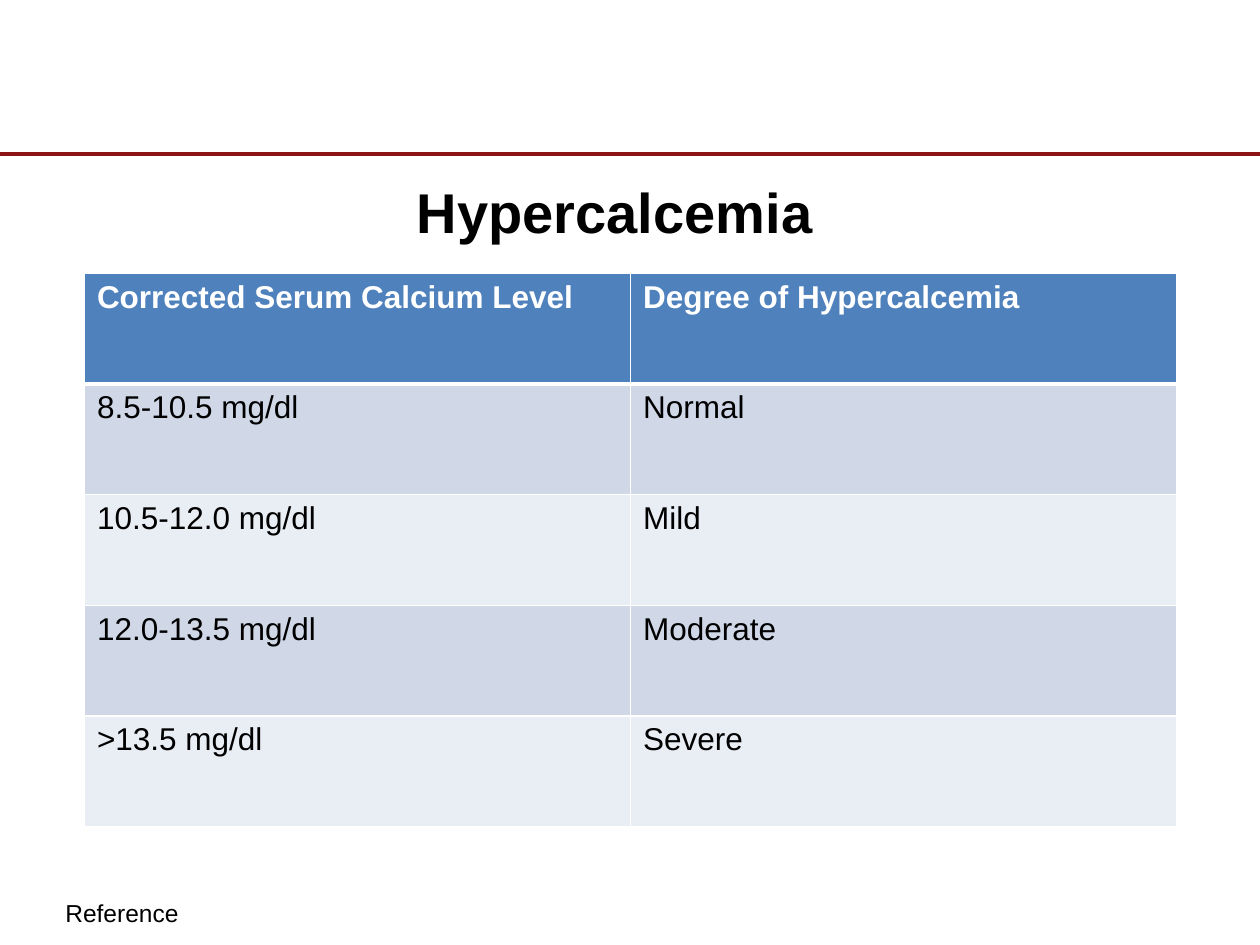
from lxml import etree
from pptx import Presentation
from pptx import util as u
from pptx.dml.color import RGBColor
from pptx.enum import shapes, text
from pptx.oxml import ns


def tint(code):
    return RGBColor.from_string(code)


class Page:
    font = "Arial"
    ink = "000000"
    white = "FFFFFF"
    red = "8C1515"
    blue = "4F81BD"
    bands = ("D0D8E8", "E9EDF4")

    def __init__(self, deck):
        self.slide = deck.slides.add_slide(deck.slide_layouts[6])
        self.items = self.slide.shapes

    def style(self, par, words, size, color, bold=False):
        par.text = words
        par.font.name = self.font
        par.font.size = u.Pt(size)
        par.font.bold = bold
        par.font.color.rgb = tint(color)

    def rule(self, top, width):
        y = u.Inches(top)
        line = self.items.add_connector(
            shapes.MSO_CONNECTOR.STRAIGHT, 0, y, u.Inches(width), y)
        line.line.color.rgb = tint(self.red)
        line.line.width = u.Pt(2.25)
        etree.SubElement(line._element.spPr, ns.qn("a:effectLst"))

    def label(self, words, place, size, bold=False, align=None, space=None):
        box = self.items.add_textbox(*map(u.Inches, place))
        frame = box.text_frame
        frame.word_wrap = True
        par = frame.paragraphs[0]
        self.style(par, words, size, self.ink, bold)
        par.alignment = align
        par.line_spacing = space

    def edge(self, cell, sides):
        props = cell._tc.get_or_add_tcPr()
        for spot, (side, width) in enumerate(sides.items()):
            line = etree.Element(ns.qn("a:ln" + side), w=str(u.Pt(width)))
            fill = etree.SubElement(line, ns.qn("a:solidFill"))
            etree.SubElement(fill, ns.qn("a:srgbClr"), val=self.white)
            props.insert(spot, line)

    def table(self, rows, place):
        grid = self.items.add_table(
            len(rows), len(rows[0]), *map(u.Inches, place)).table
        for i, row in enumerate(rows):
            head = i == 0
            for j, words in enumerate(row):
                cell = grid.cell(i, j)
                cell.fill.solid()
                cell.fill.fore_color.rgb = tint(
                    self.blue if head else self.bands[(i - 1) % 2])
                self.edge(cell, {"L": 1, "R": 1, "T": 3 if i == 1 else 1,
                                 "B": 3 if head else 1})
                self.style(cell.text_frame.paragraphs[0], words, 18,
                           self.white if head else self.ink, head)


def main():
    deck = Presentation()
    deck.slide_width = u.Inches(10)
    deck.slide_height = u.Inches(7.5)
    page = Page(deck)
    page.rule(1.22, 10)
    page.label("Hypercalcemia", (0.42, 1.31, 8.92, 0.5), 32, True,
               text.PP_ALIGN.CENTER, 1.1)
    page.label("Reference", (0.42, 7.08, 5.92, 0.64), 14)
    page.table([
        ("Corrected Serum Calcium Level", "Degree of Hypercalcemia"),
        ("8.5-10.5 mg/dl", "Normal"),
        ("10.5-12.0 mg/dl", "Mild"),
        ("12.0-13.5 mg/dl", "Moderate"),
        (">13.5 mg/dl", "Severe"),
    ], (0.67, 2.17, 8.67, 4.39))
    deck.save("out.pptx")


if __name__ == "__main__":
    main()
